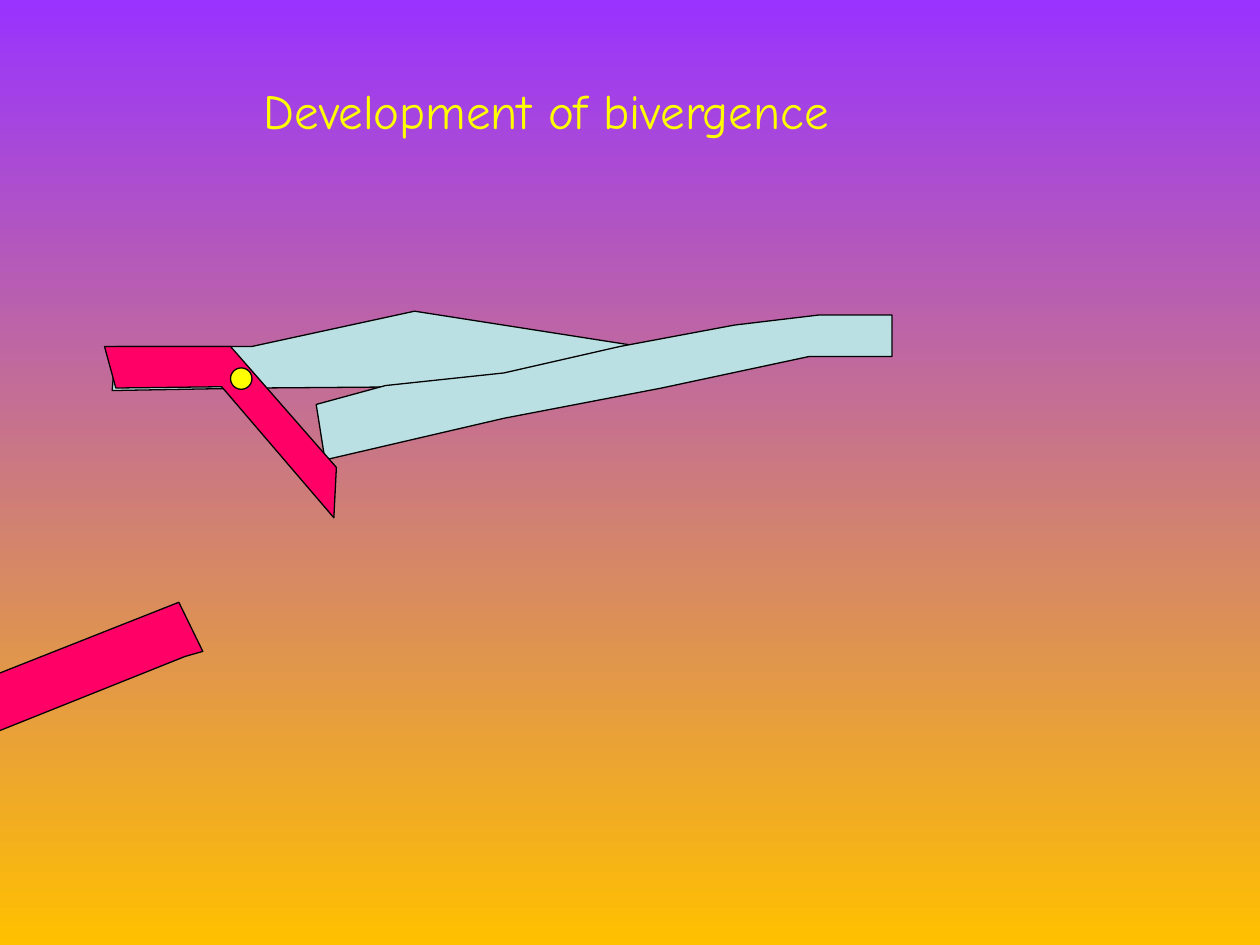
from pptx import Presentation
from pptx.dml.color import RGBColor
from pptx.enum.shapes import MSO_SHAPE
from pptx.enum.text import MSO_ANCHOR, PP_ALIGN
from pptx.util import Pt

PX = 9144
PINK, PALE_BLUE, YELLOW, BLACK = "FF0066", "BBE0E3", "FFFF00", "000000"
VIOLET, AMBER = "9933FF", "FFC000"


def color(hex_value):
    """Return the colour for a hex string."""
    return RGBColor.from_string(hex_value)


def paint(part, fill):
    """Give a part its flat fill and thin black outline."""
    part.shadow.inherit = False
    part.fill.solid()
    part.fill.fore_color.rgb = color(fill)
    part.line.color.rgb = color(BLACK)
    part.line.width = Pt(0.75)


def add_outline(slide, box, points, fill, close):
    """Draw an outline through points relative to the box."""
    left, top = box[:2]
    corners = [((left + x) * PX, (top + y) * PX) for x, y in points]
    builder = slide.shapes.build_freeform(*corners[0])
    builder.add_line_segments(corners[1:], close=close)
    paint(builder.convert_to_shape(), fill)


def add_background(slide):
    """Fill the slide with a vertical gradient."""
    fill = slide.background.fill
    fill.gradient()
    fill.gradient_angle = 270
    for stop, hex_value in zip(fill.gradient_stops, (VIOLET, AMBER)):
        stop.color.rgb = color(hex_value)


def add_title(slide, box):
    """Place the centred title in the box."""
    frame = slide.shapes.add_textbox(*(n * PX for n in box)).text_frame
    frame.word_wrap = True
    frame.vertical_anchor = MSO_ANCHOR.MIDDLE
    heading = frame.paragraphs[0]
    heading.alignment = PP_ALIGN.CENTER
    run = heading.add_run()
    run.text = "Development of bivergence"
    for name, value in {"name": "Comic Neue", "size": Pt(28)}.items():
        setattr(run.font, name, value)
    run.font.color.rgb = color(YELLOW)


def add_loose_bar(slide, box):
    """Draw the slanted bar that runs off the left edge."""
    bar = [(167, 0), (0, 66), (17, 105), (172, 43), (186, 39)]
    add_outline(slide, box, bar, PINK, True)


def add_linkage(slide, box):
    """Draw the two beams, the bent lever and its pivot."""
    upper_beam = [(425, 28), (246, 0), (117, 28), (9, 28),
                  (6, 63), (120, 61), (253, 60), (407, 36)]
    lower_beam = [(625, 3), (567, 3), (500, 11), (409, 28), (317, 49), (223, 59),
                  (168, 74), (175, 118), (317, 85), (442, 61), (559, 36), (625, 36)]
    lever = [(9, 28), (100, 28), (184, 124), (182, 164),
             (93, 60), (9, 61), (0, 28), (100, 28)]
    for points, fill, close in ((upper_beam, PALE_BLUE, False),
                                (lower_beam, PALE_BLUE, True),
                                (lever, PINK, False)):
        add_outline(slide, box, points, fill, close)
    left, top = box[:2]
    pivot = slide.shapes.add_shape(
        MSO_SHAPE.OVAL, (left + 100) * PX, (top + 45) * PX, 17 * PX, 17 * PX)
    paint(pivot, YELLOW)


def main():
    """Build and save the slide."""
    deck = Presentation()
    deck.slide_width, deck.slide_height = 1000 * PX, 750 * PX
    slide = deck.slides.add_slide(deck.slide_layouts[6])
    add_background(slide)
    add_title(slide, (50, 33, 767, 108))
    add_loose_bar(slide, (-25, 478, 186, 106))
    add_linkage(slide, (83, 247, 625, 164))
    deck.save("out.pptx")


if __name__ == "__main__":
    main()
